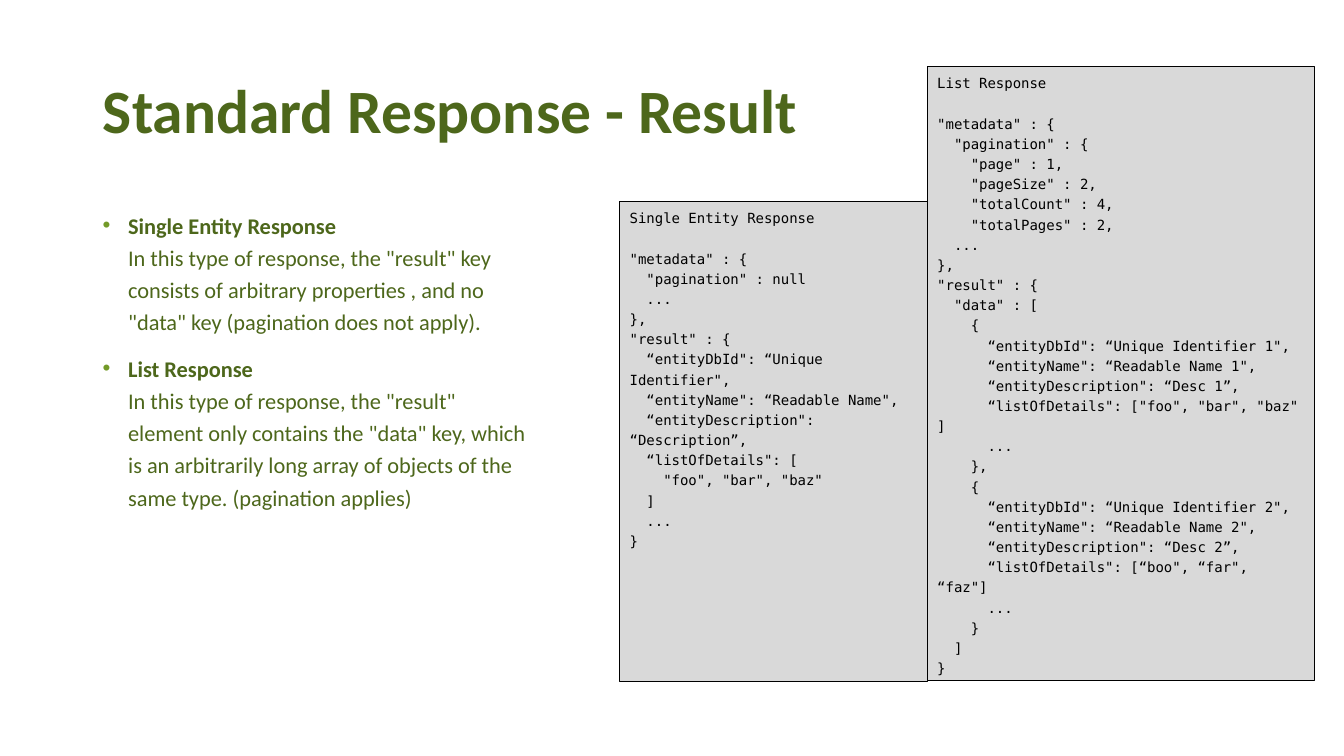
from dataclasses import dataclass

from lxml.etree import SubElement
from pptx import Presentation
from pptx.dml.color import RGBColor
from pptx.enum.shapes import MSO_SHAPE
from pptx.enum.text import MSO_ANCHOR, MSO_AUTO_SIZE, PP_ALIGN
from pptx.oxml.ns import qn
from pptx.util import Cm, Pt


@dataclass(frozen=True)
class Theme:
    """Hold the colours, fonts and type sizes of the deck."""

    text: RGBColor = RGBColor(0x4D, 0x67, 0x1B)
    bullet: str = "739A28"
    code: RGBColor = RGBColor(0, 0, 0)
    panel: RGBColor = RGBColor(0xD9, 0xD9, 0xD9)
    text_font: str = "Calibri"
    code_font: str = "DejaVu Sans Mono"
    title_size: int = 44
    body_size: int = 16
    code_size: int = 10
    line_spacing: float = 1.2


TOPICS = [
    ("Single Entity Response",
     'In this type of response, the "result" key consists of arbitrary properties , '
     'and no "data" key (pagination does not apply).'),
    ("List Response",
     'In this type of response, the "result" element only contains the "data" key, '
     "which is an arbitrarily long array of objects of the same type. "
     "(pagination applies)"),
]

SINGLE_CODE = """\
"metadata" : {
  "pagination" : null
  ...
},
"result" : {
  “entityDbId": “Unique Identifier",
  “entityName": “Readable Name",
  “entityDescription": “Description”,
  “listOfDetails": [
    "foo", "bar", "baz"
  ]
  ...
}"""

LIST_CODE = """\
"metadata" : {
  "pagination" : {
    "page" : 1,
    "pageSize" : 2,
    "totalCount" : 4,
    "totalPages" : 2,
  ...
},
"result" : {
  "data" : [
    {
      “entityDbId": “Unique Identifier 1",
      “entityName": “Readable Name 1",
      “entityDescription": “Desc 1”,
      “listOfDetails": ["foo", "bar", "baz" ]
      ...
    },
    {
      “entityDbId": “Unique Identifier 2",
      “entityName": “Readable Name 2",
      “entityDescription": “Desc 2”,
      “listOfDetails": [“boo", “far", “faz"]
      ...
    }
  ]
}"""


class SlideBuilder:
    """Add styled elements to one slide."""

    def __init__(self, page, theme):
        """Keep the slide and its style."""
        self.page = page
        self.theme = theme

    def style(self, span, size, color, name, bold=False):
        """Format one run of text."""
        span.font.size = Pt(size)
        span.font.color.rgb = color
        span.font.name = name
        span.font.bold = bold

    def title(self, text, left, top, width, height):
        """Fill and place the title placeholder."""
        box = self.page.shapes.title
        box.left, box.top, box.width, box.height = map(Cm, (left, top, width, height))
        frame = box.text_frame
        frame.text = text
        frame.auto_size = MSO_AUTO_SIZE.NONE
        frame.vertical_anchor = MSO_ANCHOR.MIDDLE
        para = frame.paragraphs[0]
        para.alignment = PP_ALIGN.LEFT
        para.line_spacing = 0.9
        self.style(para.runs[0], self.theme.title_size, self.theme.text,
                   self.theme.text_font, bold=True)

    def bullet(self, para):
        """Give a paragraph a hanging coloured bullet."""
        properties = para._p.get_or_add_pPr()
        properties.set("marL", str(Cm(0.64)))
        properties.set("indent", str(-Cm(0.64)))
        color = SubElement(properties, qn("a:buClr"))
        SubElement(color, qn("a:srgbClr"), val=self.theme.bullet)
        SubElement(properties, qn("a:buFont"), typeface="Arial")
        SubElement(properties, qn("a:buChar"), char="•")

    def topics(self, topics, left, top, width, height):
        """Add bulleted topics, each a bold heading over its description."""
        box = self.page.shapes.add_textbox(*map(Cm, (left, top, width, height)))
        frame = box.text_frame
        frame.word_wrap = True
        for index, (heading, description) in enumerate(topics):
            para = frame.add_paragraph() if index else frame.paragraphs[0]
            para.text = f"{heading}\v{description}"
            self.bullet(para)
            para.line_spacing = self.theme.line_spacing
            para.space_before = Pt(10 if index else 0)
            for span in para.runs:
                self.style(span, self.theme.body_size, self.theme.text,
                           self.theme.text_font, bold=span.text == heading)

    def code_panel(self, heading, code, left, top, width, height):
        """Add a grey panel with a heading and a code sample."""
        box = self.page.shapes.add_shape(
            MSO_SHAPE.RECTANGLE, *map(Cm, (left, top, width, height)))
        box.shadow.inherit = False
        box.fill.solid()
        box.fill.fore_color.rgb = self.theme.panel
        box.line.color.rgb = self.theme.code
        box.line.width = Pt(0.75)
        frame = box.text_frame
        frame.word_wrap = True
        frame.vertical_anchor = MSO_ANCHOR.TOP
        frame.text = f"{heading}\n{code}"
        for index, para in enumerate(frame.paragraphs):
            para.alignment = PP_ALIGN.LEFT
            para.line_spacing = self.theme.line_spacing
            para.space_before = Pt(14.4 if index == 1 else 0)
            self.style(para.runs[0], self.theme.code_size, self.theme.code,
                       self.theme.code_font)


def main():
    """Build and save the deck."""
    deck = Presentation()
    deck.slide_width, deck.slide_height = Cm(33.87), Cm(19.05)
    builder = SlideBuilder(deck.slides.add_slide(deck.slide_layouts[5]), Theme())
    builder.title("Standard Response - Result", 2.34, 1.02, 29.21, 3.68)
    builder.topics(TOPICS, 2.34, 5.08, 11.3, 12.09)
    builder.code_panel("Single Entity Response", SINGLE_CODE, 15.62, 5.08, 7.75, 12.09)
    builder.code_panel("List Response", LIST_CODE, 23.37, 1.68, 9.75, 15.48)
    deck.save("out.pptx")


if __name__ == "__main__":
    main()
